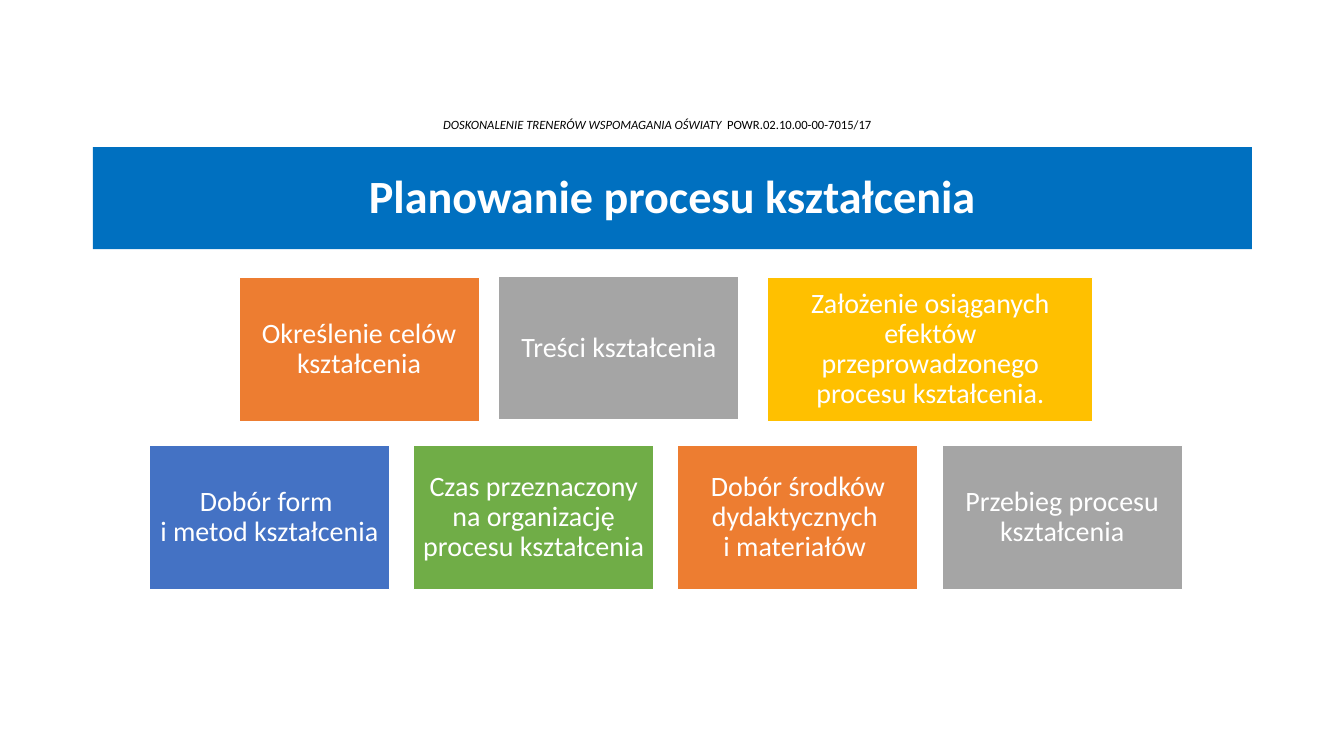
import pptx
import pptx.util
import pptx.dml.color
import pptx.enum.shapes
import pptx.enum.text

Cm = pptx.util.Cm
Pt = pptx.util.Pt
RGBColor = pptx.dml.color.RGBColor
MIDDLE = pptx.enum.text.MSO_ANCHOR.MIDDLE

BLACK = RGBColor(0x00, 0x00, 0x00)
WHITE = RGBColor(0xFF, 0xFF, 0xFF)
TITLE_BLUE = RGBColor(0x00, 0x70, 0xC0)
ORANGE = RGBColor(0xED, 0x7D, 0x31)
GRAY = RGBColor(0xA5, 0xA5, 0xA5)
GOLD = RGBColor(0xFF, 0xC0, 0x00)
BLUE = RGBColor(0x44, 0x72, 0xC4)
GREEN = RGBColor(0x70, 0xAD, 0x47)

PROJECT = "DOSKONALENIE TRENERÓW WSPOMAGANIA OŚWIATY "
PROJECT_NUMBER = " POWR.02.10.00-00-7015/17"
TITLE = "Planowanie procesu kształcenia"

STEP_WIDTH, STEP_HEIGHT = 6.06, 3.63
GOALS = [
    ("Określenie celów kształcenia", ORANGE, 6.02, 6.99, STEP_WIDTH),
    ("Treści kształcenia", GRAY, 12.57, 6.96, STEP_WIDTH),
    ("Założenie osiąganych efektów przeprowadzonego procesu kształcenia.",
     GOLD, 19.35, 6.99, 8.19),
]
METHODS = [
    ("Dobór form \vi metod kształcenia", BLUE),
    ("Czas przeznaczony na organizację procesu kształcenia", GREEN),
    ("Dobór środków dydaktycznych \vi materiałów ", ORANGE),
    ("Przebieg procesu kształcenia", GRAY),
]
METHODS_LEFT, METHODS_TOP, METHODS_PITCH = 3.76, 11.23, 6.66


def style(paragraph, size, color, bold=False):
    paragraph.alignment = pptx.enum.text.PP_ALIGN.CENTER
    paragraph.line_spacing = 0.9
    paragraph.font.name = "Calibri"
    paragraph.font.size = Pt(size)
    paragraph.font.bold = bold
    paragraph.font.color.rgb = color


def add_block(slide, text, fill, left, top, width, height, size, bold=False):
    block = slide.shapes.add_shape(
        pptx.enum.shapes.MSO_SHAPE.RECTANGLE,
        Cm(left), Cm(top), Cm(width), Cm(height))
    block.shadow.inherit = False
    block.fill.solid()
    block.fill.fore_color.rgb = fill
    frame = block.text_frame
    frame.word_wrap = True
    frame.vertical_anchor = MIDDLE
    frame.margin_left = frame.margin_right = Cm(0.2)
    frame.margin_top = frame.margin_bottom = Cm(0.2)
    frame.text = text
    style(frame.paragraphs[0], size, WHITE, bold)
    return block


def add_step(slide, text, fill, left, top, width):
    step = add_block(slide, text, fill, left, top, width, STEP_HEIGHT, 20)
    step.line.color.rgb = WHITE
    step.line.width = Pt(1)


def main():
    deck = pptx.Presentation()
    deck.slide_width, deck.slide_height = Cm(33.87), Cm(19.05)
    slide = deck.slides.add_slide(deck.slide_layouts[6])

    header = slide.shapes.add_textbox(Cm(2.01), Cm(1.17), Cm(29.11), Cm(3.1))
    header_frame = header.text_frame
    header_frame.word_wrap = True
    header_frame.vertical_anchor = pptx.enum.text.MSO_ANCHOR.BOTTOM
    header_frame.margin_bottom = Cm(0.93)
    project_line = header_frame.paragraphs[0]
    style(project_line, 9, BLACK)
    project = project_line.add_run()
    project.text = PROJECT
    project.font.italic = True
    project_line.add_run().text = PROJECT_NUMBER

    title = add_block(slide, TITLE, TITLE_BLUE, 2.34, 3.71, 29.21, 2.57, 33, True)
    title.line.fill.background()

    for goal in GOALS:
        add_step(slide, *goal)
    for column, (text, fill) in enumerate(METHODS):
        left = METHODS_LEFT + column * METHODS_PITCH
        add_step(slide, text, fill, left, METHODS_TOP, STEP_WIDTH)

    deck.save("out.pptx")


if __name__ == "__main__":
    main()
